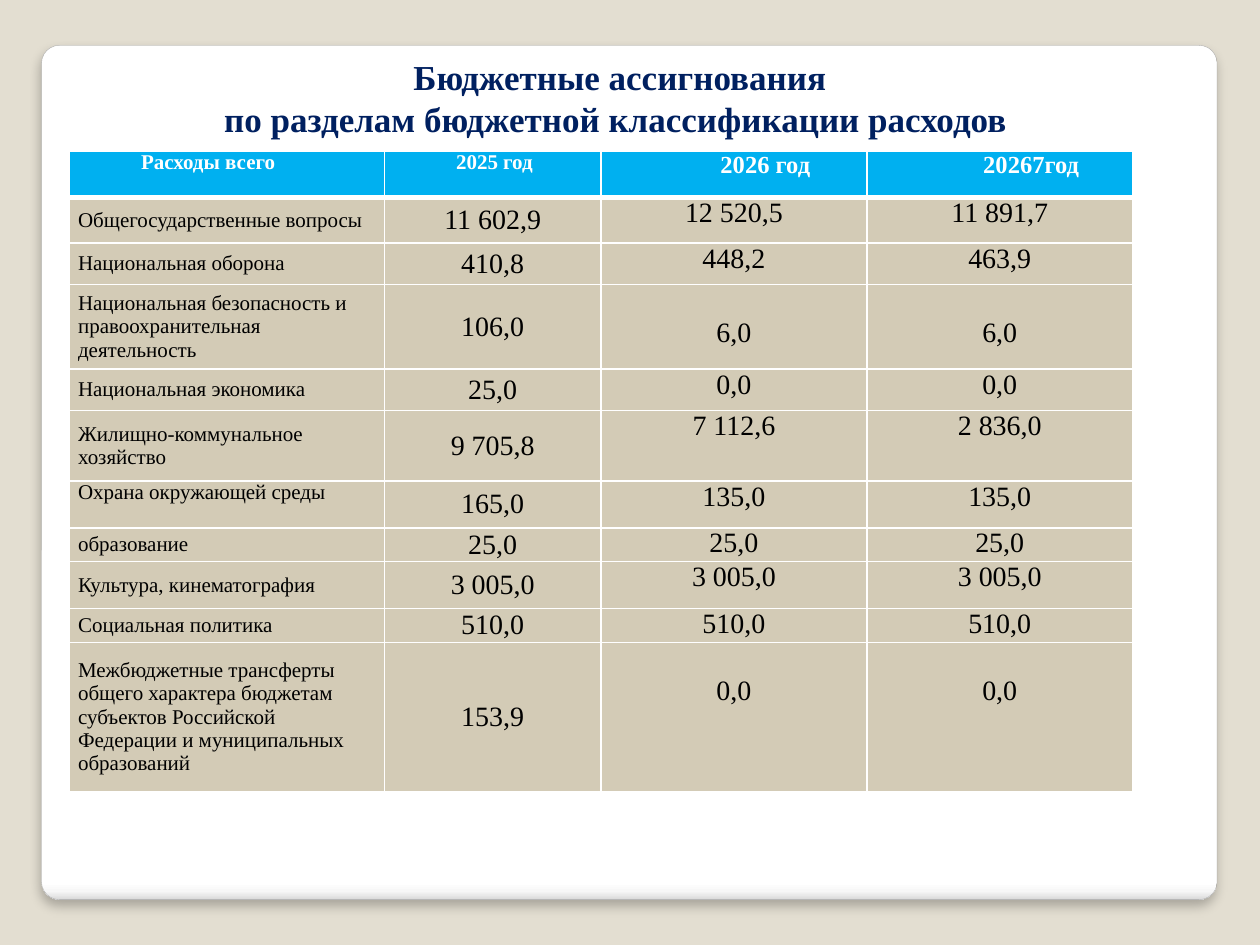
from copy import deepcopy

from lxml import etree
from pptx import Presentation
from pptx.dml.color import RGBColor
from pptx.enum.shapes import MSO_SHAPE as Shape
from pptx.enum.text import MSO_ANCHOR as Anchor, MSO_AUTO_SIZE as AutoSize, PP_ALIGN as Align
from pptx.oxml.ns import qn
from pptx.util import Inches, Pt

FONT = "Times New Roman"
HEADERS = ["Расходы всего", "2025 год", "2026 год", "20267год"]
EXPENSES = [
    ("Общегосударственные вопросы", "11 602,9", "12 520,5", "11 891,7"),
    ("Национальная оборона", "410,8", "448,2", "463,9"),
    ("Национальная безопасность и правоохранительная деятельность", "106,0", "6,0", "6,0"),
    ("Национальная экономика", "25,0", "0,0", "0,0"),
    ("Жилищно-коммунальное хозяйство", "9 705,8", "7 112,6", "2 836,0"),
    ("Охрана окружающей среды", "165,0", "135,0", "135,0"),
    ("образование", "25,0", "25,0", "25,0"),
    ("Культура, кинематография", "3 005,0", "3 005,0", "3 005,0"),
    ("Социальная политика", "510,0", "510,0", "510,0"),
    ("Межбюджетные трансферты общего характера бюджетам субъектов Российской "
     "Федерации и муниципальных образований", "153,9", "0,0", "0,0"),
]
COLUMN_WIDTHS = [2.5, 1.72, 2.11, 2.11]
ROW_HEIGHTS = [0.37, 0.36, 0.33, 0.67, 0.33, 0.56, 0.37, 0.27, 0.37, 0.27, 1.19]
LOWERED_ROWS = (3, 10)  # the last two columns start one line lower here
TOP_LABEL_ROW = 6


def color(hex_code):
    return RGBColor.from_string(hex_code)


def add_node(parent, tag, **attributes):
    return etree.SubElement(parent, qn(tag), {k: str(v) for k, v in attributes.items()})


def write(text_frame, text, size=12, ink="000000", bold=False, align=Align.LEFT, indent=0):
    paragraph = text_frame.paragraphs[0]
    paragraph.text = text
    paragraph.alignment = align
    if indent:
        paragraph._p.get_or_add_pPr().set("indent", str(Inches(indent)))
    for run in paragraph.runs:
        font = run.font
        font.name, font.size, font.bold = FONT, Pt(size), bold
        font.color.rgb = color(ink)
    # Line breaks take the size of the text around them
    for line_break in paragraph._p.findall(qn("a:br")):
        line_break.append(deepcopy(paragraph.runs[0]._r.rPr))


def add_panel(slide, left, top, width, height):
    panel = slide.shapes.add_shape(Shape.ROUNDED_RECTANGLE, left, top, width, height)
    panel.adjustments[0] = 0.021
    panel.line.color.rgb = color("A4A4A4")
    panel.line.width = Pt(0.16)

    # Four-stop gradient, darkening at the lower edge
    panel.fill.gradient()
    panel.fill.gradient_angle = 270
    properties = panel._element.spPr
    stops = properties.find(".//" + qn("a:gsLst"))
    for stop in list(stops):
        stops.remove(stop)
    for position, shade in [(0, "FFFFFF"), (98, "FFFFFF"), (99, "F7F7F7"), (100, "DADADA")]:
        add_node(add_node(stops, "a:gs", pos=position * 1000), "a:srgbClr", val=shade)

    # Soft shadow below
    panel.shadow.inherit = False
    shadow = add_node(properties.find(qn("a:effectLst")), "a:outerShdw",
                      blurRad=Pt(6), dist=Pt(4), dir=90 * 60000, rotWithShape=0)
    add_node(add_node(shadow, "a:srgbClr", val="000000"), "a:alpha", val=25000)

    # Behind the title
    slide.shapes._spTree.insert(2, panel._element)


def place_title(slide, left, top, width, height):
    title = slide.shapes.title
    title.left, title.top, title.width, title.height = left, top, width, height
    frame = title.text_frame
    frame.word_wrap = True
    frame.auto_size = AutoSize.SHAPE_TO_FIT_TEXT
    frame.vertical_anchor = Anchor.MIDDLE
    write(frame, "Бюджетные ассигнования\vпо разделам бюджетной классификации расходов ",
          size=20, ink="002060", bold=True, align=Align.CENTER)


def set_borders(cell, top_width, bottom_width):
    properties = cell._tc.get_or_add_tcPr()
    widths = {"a:lnL": 1, "a:lnR": 1, "a:lnT": top_width, "a:lnB": bottom_width}
    for position, (tag, width) in enumerate(widths.items()):
        line = add_node(properties, tag, w=Pt(width))
        add_node(add_node(line, "a:solidFill"), "a:srgbClr", val="FFFFFF")
        properties.insert(position, line)


def format_cell(cell, row, column):
    cell.margin_left = cell.margin_right = Inches(0.07)
    cell.margin_top = cell.margin_bottom = 0
    cell.fill.solid()
    cell.fill.fore_color.rgb = color("D3CBB6" if row else "00B0F0")
    set_borders(cell, 3 if row == 1 else 1, 1 if row else 3)
    at_top = row == 0 or column > 1 or (row == TOP_LABEL_ROW and column == 0)
    cell.vertical_anchor = Anchor.TOP if at_top else Anchor.MIDDLE
    if row in LOWERED_ROWS and column > 1:
        cell.margin_top = Inches(0.26)


def add_expense_table(slide, left, top, width, height):
    rows = [HEADERS, *EXPENSES]
    table = slide.shapes.add_table(len(rows), len(HEADERS), left, top, width, height).table
    table.horz_banding = False
    for column, column_width in zip(table.columns, COLUMN_WIDTHS):
        column.width = Inches(column_width)
    for row, row_height in zip(table.rows, ROW_HEIGHTS):
        row.height = Inches(row_height)

    for r, texts in enumerate(rows):
        for c, text in enumerate(texts):
            cell = table.cell(r, c)
            format_cell(cell, r, c)
            if r == 0:
                write(cell.text_frame, text, size=14 if c > 1 else 12, ink="FFFFFF", bold=True,
                      align=Align.CENTER if c > 1 else Align.LEFT, indent=0.5)
            elif c == 0:
                write(cell.text_frame, text)
            else:
                write(cell.text_frame, text, size=16, align=Align.CENTER)


def main():
    presentation = Presentation()
    presentation.slide_width, presentation.slide_height = Inches(10), Inches(7.5)
    slide = presentation.slides.add_slide(presentation.slide_layouts[5])
    slide.background.fill.solid()
    slide.background.fill.fore_color.rgb = color("E3DED1")

    add_panel(slide, Inches(0.33), Inches(0.36), Inches(9.33), Inches(6.78))
    place_title(slide, Inches(0.78), Inches(0.39), Inches(8.28), Inches(0.77))
    add_expense_table(slide, Inches(0.55), Inches(1.2),
                      Inches(sum(COLUMN_WIDTHS)), Inches(sum(ROW_HEIGHTS)))
    presentation.save("out.pptx")


if __name__ == "__main__":
    main()
